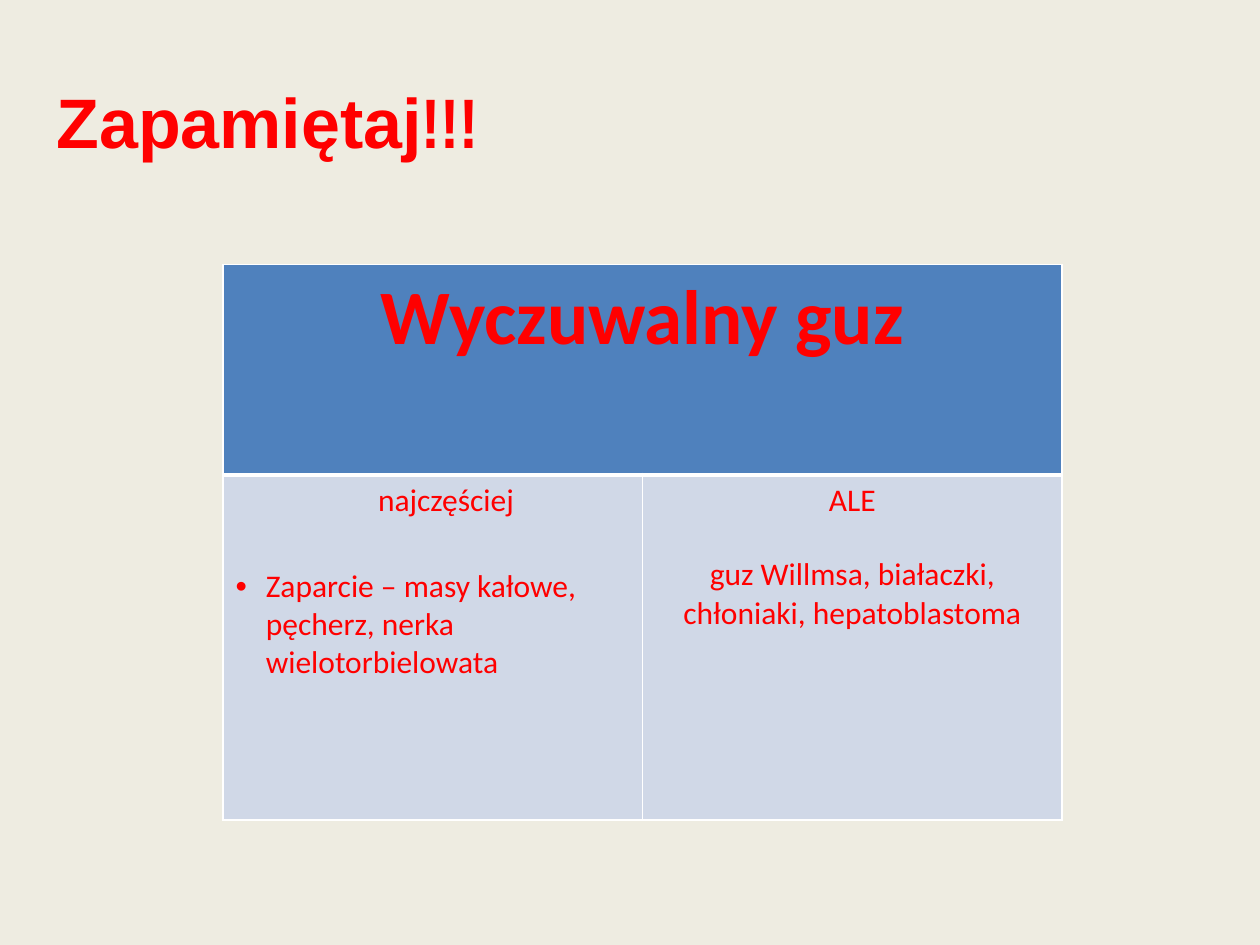
from dataclasses import dataclass

from lxml.etree import SubElement
from pptx import Presentation
from pptx.dml.color import RGBColor
from pptx.enum.text import MSO_ANCHOR, PP_ALIGN
from pptx.oxml.ns import qn
from pptx.util import Inches, Pt


@dataclass(frozen=True)
class Theme:
    background: str = "EEECE1"
    accent: str = "FF0000"
    header_fill: str = "4F81BD"
    body_fill: str = "D0D8E7"
    border: str = "FFFFFF"
    title_font: str = "Arial"
    mark_font: str = "Arial Narrow"
    table_font: str = "Calibri"
    title_size: int = 40
    header_size: int = 44
    body_size: int = 18
    thin: float = 0.96
    thick: float = 3


THEME = Theme()
COLUMNS = [3.33, 3.33]
ROWS = [1.67, 2.74]


def style_run(run, font, size, bold=False):
    run.font.name = font
    run.font.size = Pt(size)
    run.font.bold = bold
    run.font.color.rgb = RGBColor.from_string(THEME.accent)


def add_title(slide, words, marks):
    title = slide.shapes.add_textbox(Inches(0.35), Inches(0.06), Inches(5.61), Inches(1.8))
    frame = title.text_frame
    frame.word_wrap = True
    frame.vertical_anchor = MSO_ANCHOR.MIDDLE
    for text, font in ((words, THEME.title_font), (marks, THEME.mark_font)):
        run = frame.paragraphs[0].add_run()
        run.text = text
        style_run(run, font, THEME.title_size, bold=True)


def set_borders(cell, top, bottom):
    properties = cell._tc.get_or_add_tcPr()
    widths = {"a:lnL": THEME.thin, "a:lnR": THEME.thin, "a:lnT": top, "a:lnB": bottom}
    for position, (side, width) in enumerate(widths.items()):
        line = SubElement(properties, qn(side), w=str(Pt(width)))
        fill = SubElement(line, qn("a:solidFill"))
        SubElement(fill, qn("a:srgbClr"), val=THEME.border)
        properties.insert(position, line)  # borders come before the fill


def fill_cell(cell, lines, fill, size, bold=False):
    cell.fill.solid()
    cell.fill.fore_color.rgb = RGBColor.from_string(fill)
    cell.text_frame.text = "\n".join(lines)
    for paragraph in cell.text_frame.paragraphs:
        paragraph.alignment = PP_ALIGN.CENTER
        for run in paragraph.runs:
            style_run(run, THEME.table_font, size, bold)
    return cell.text_frame.paragraphs


def indent(paragraph, margin, hanging=0):
    paragraph.alignment = PP_ALIGN.LEFT
    properties = paragraph._p.get_or_add_pPr()
    properties.set("marL", str(Inches(margin)))
    properties.set("indent", str(-Inches(hanging)))
    return properties


def add_bullet(paragraph):
    properties = indent(paragraph, 0.24, hanging=0.24)
    SubElement(properties, qn("a:buSzPct"), val="103000")
    SubElement(properties, qn("a:buFont"), typeface=THEME.title_font)
    SubElement(properties, qn("a:buChar"), char="•")


def add_findings_table(slide):
    frame = slide.shapes.add_table(len(ROWS), len(COLUMNS), Inches(1.77), Inches(2.1),
                                   Inches(sum(COLUMNS)), Inches(sum(ROWS)))
    table = frame.table
    for column, width in zip(table.columns, COLUMNS):
        column.width = Inches(width)
    for row, height in zip(table.rows, ROWS):
        row.height = Inches(height)

    # Header across both columns
    header = table.cell(0, 0)
    header.merge(table.cell(0, 1))
    fill_cell(header, ["Wyczuwalny guz"], THEME.header_fill, THEME.header_size, bold=True)

    # Common causes
    label, causes = fill_cell(
        table.cell(1, 0),
        ["najczęściej", "Zaparcie – masy kałowe, pęcherz, nerka wielotorbielowata"],
        THEME.body_fill, THEME.body_size)
    indent(label, 1.13)
    causes.space_before = Pt(27)
    add_bullet(causes)

    # Serious causes
    _, tumours = fill_cell(
        table.cell(1, 1),
        ["ALE", "guz Willmsa, białaczki, chłoniaki, hepatoblastoma"],
        THEME.body_fill, THEME.body_size)
    tumours.space_before = Pt(20.5)

    # Thick rule between header and body
    for column in range(len(COLUMNS)):
        set_borders(table.cell(0, column), THEME.thin, THEME.thick)
        set_borders(table.cell(1, column), THEME.thick, THEME.thin)


def main():
    presentation = Presentation()
    presentation.slide_width, presentation.slide_height = Inches(10), Inches(7.5)
    slide = presentation.slides.add_slide(presentation.slide_layouts[6])
    slide.background.fill.solid()
    slide.background.fill.fore_color.rgb = RGBColor.from_string(THEME.background)
    add_title(slide, "Zapamiętaj", "!!!")
    add_findings_table(slide)
    presentation.save("out.pptx")


if __name__ == "__main__":
    main()
